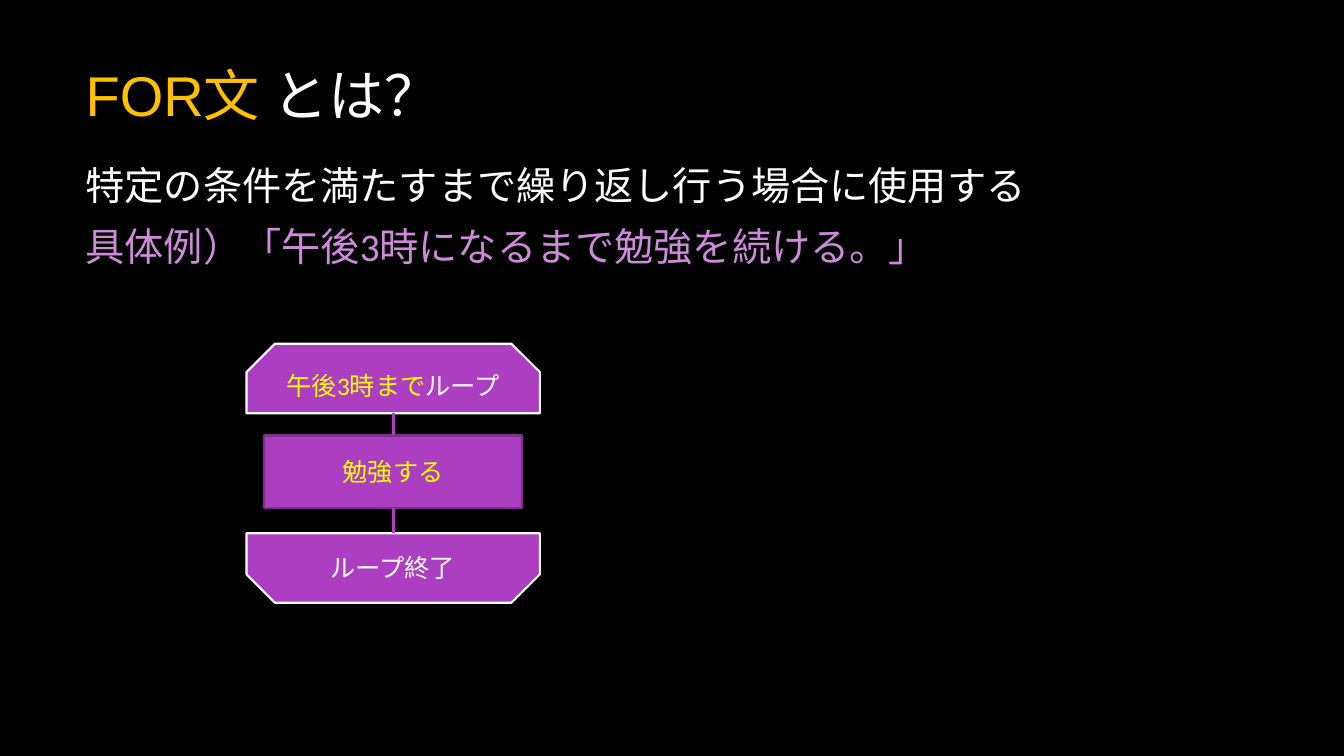
from dataclasses import dataclass

from lxml.etree import SubElement
from pptx import Presentation
from pptx.dml.color import RGBColor
from pptx.enum.shapes import MSO_CONNECTOR as Connector, MSO_SHAPE as Shape
from pptx.enum.text import MSO_ANCHOR as Anchor, MSO_AUTO_SIZE as AutoSize, PP_ALIGN as Align
from pptx.oxml.ns import qn
from pptx.util import Inches, Pt


@dataclass(frozen=True)
class Theme:
    background: str = "000000"
    text: str = "FFFFFF"
    title_accent: str = "FFC000"
    example: str = "CD8BDA"
    highlight: str = "FFFF00"
    fill: str = "AC3EC1"
    process_line: str = "7F2E8F"
    title_font: str = "Arial"
    body_font: str = "Calibri"
    title_size: int = 40
    body_size: int = 28
    label_size: int = 18
    outline: float = 1.5
    link_width: float = 2.25


class FlowPage:
    """One slide drawn in one theme."""

    def __init__(self, deck, theme):
        self.theme = theme
        self.page = deck.slides.add_slide(deck.slide_layouts[1])
        background = self.page.background.fill
        background.solid()
        background.fore_color.rgb = RGBColor.from_string(theme.background)

    def add_spans(self, para, spans, size, font_name):
        """Fill a paragraph with (text, colour) spans."""
        for text, color in spans:
            span = para.add_run()
            span.text = text
            span.font.size = Pt(size)
            span.font.name = font_name
            span.font.color.rgb = RGBColor.from_string(color)

    def place(self, box, left, top, width, height):
        box.left, box.top = Inches(left), Inches(top)
        box.width, box.height = Inches(width), Inches(height)
        box.text_frame.auto_size = AutoSize.NONE
        box.text_frame.word_wrap = True

    def title(self, spans, *area):
        box = self.page.shapes.title
        self.place(box, *area)
        box.text_frame.vertical_anchor = Anchor.MIDDLE
        para = box.text_frame.paragraphs[0]
        para.alignment = Align.LEFT
        self.add_spans(para, spans, self.theme.title_size, self.theme.title_font)

    def body(self, lines, *area):
        box = self.page.placeholders[1]
        self.place(box, *area)
        frame = box.text_frame
        frame.vertical_anchor = Anchor.TOP
        frame.text = "\n".join(text for text, color in lines)
        for para, (text, color) in zip(frame.paragraphs, lines):
            properties = para._p.get_or_add_pPr()
            properties.set("marL", "0")
            properties.set("indent", "0")
            SubElement(properties, qn("a:buNone"))
            para.space_before, para.space_after = Pt(0), Pt(10)
            font = para.runs[0].font
            font.size = Pt(self.theme.body_size)
            font.name = self.theme.body_font
            font.color.rgb = RGBColor.from_string(color)

    def block(self, kind, line_color, spans, *area):
        box = self.page.shapes.add_shape(kind, *map(Inches, area))
        box.shadow.inherit = False
        box.fill.solid()
        box.fill.fore_color.rgb = RGBColor.from_string(self.theme.fill)
        box.line.color.rgb = RGBColor.from_string(line_color)
        box.line.width = Pt(self.theme.outline)
        box.text_frame.word_wrap = True
        box.text_frame.vertical_anchor = Anchor.MIDDLE
        para = box.text_frame.paragraphs[0]
        para.alignment = Align.CENTER
        self.add_spans(para, spans, self.theme.label_size, self.theme.body_font)
        return box

    def loop_end(self, spans, *area, flipped=False):
        box = self.block(Shape.SNIP_2_SAME_RECTANGLE, self.theme.text, spans, *area)
        box.adjustments[0], box.adjustments[1] = 0.409, 0
        if flipped:
            box._element.spPr.find(qn("a:xfrm")).set("flipV", "1")
        return box

    def label(self, spans, *area):
        box = self.page.shapes.add_textbox(*map(Inches, area))
        self.place(box, *area)
        para = box.text_frame.paragraphs[0]
        self.add_spans(para, spans, self.theme.label_size, self.theme.body_font)

    def link(self, x, top, bottom):
        line = self.page.shapes.add_connector(
            Connector.STRAIGHT, Inches(x), Inches(top), Inches(x), Inches(bottom))
        line.line.color.rgb = RGBColor.from_string(self.theme.fill)
        line.line.width = Pt(self.theme.link_width)
        SubElement(line._element.spPr, qn("a:effectLst"))
        return line


def main():
    deck = Presentation()
    deck.slide_width, deck.slide_height = Inches(13.33), Inches(7.5)
    theme = Theme()
    flow = FlowPage(deck, theme)

    # Heading and explanation
    flow.title([("FOR文 ", theme.title_accent), ("とは？", theme.text)],
               0.75, 0.14, 11.08, 1.59)
    flow.body([("特定の条件を満たすまで繰り返し行う場合に使用する", theme.text),
               ("具体例）「午後3時になるまで勉強を続ける。」", theme.example)],
              0.75, 1.55, 11.48, 1.9)

    # Loop flowchart, centred on one axis
    axis, end_width, end_height = 3.9, 2.91, 0.69
    start_top, finish_top = 3.41, 5.29
    process_width, process_top, process_height = 2.56, 4.32, 0.72
    end_left = axis - end_width / 2
    flow.loop_end([("午後3時まで", theme.highlight), ("ループ", theme.text)],
                  end_left, start_top, end_width, end_height)
    flow.loop_end([], end_left, finish_top, end_width, end_height, flipped=True)
    process = flow.block(Shape.RECTANGLE, theme.process_line,
                         [("勉強する", theme.highlight)],
                         axis - process_width / 2, process_top, process_width, process_height)
    flow.label([("ループ終了", theme.text)], 3.18, 5.43, 1.44, 0.4)

    # Links into and out of the process
    flow.link(axis, start_top + end_height, process_top).end_connect(process, 0)
    flow.link(axis, process_top + process_height, finish_top).begin_connect(process, 2)

    deck.save("out.pptx")


if __name__ == "__main__":
    main()
